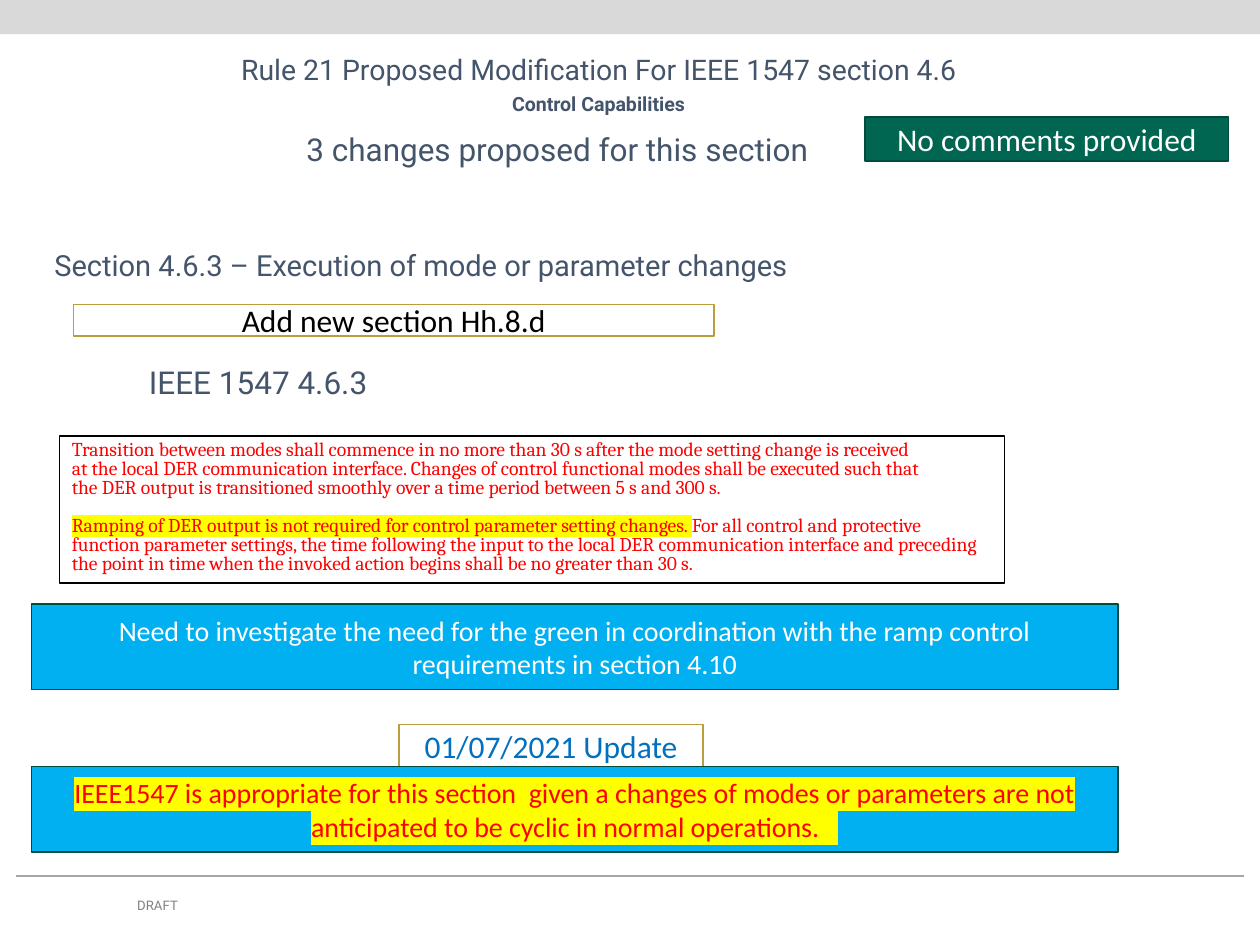
"""Build the Rule 21 slide on IEEE 1547 section 4.6 control capabilities."""
from dataclasses import dataclass
from typing import Optional

from lxml import etree
from pptx import Presentation
from pptx.dml.color import RGBColor
from pptx.enum.shapes import MSO_CONNECTOR, MSO_SHAPE
from pptx.enum.text import MSO_ANCHOR, PP_ALIGN
from pptx.oxml.ns import qn
from pptx.util import Pt

RECTANGLE = MSO_SHAPE.RECTANGLE
STRAIGHT = MSO_CONNECTOR.STRAIGHT
TOP, MIDDLE = MSO_ANCHOR.TOP, MSO_ANCHOR.MIDDLE
LEFT, CENTER = PP_ALIGN.LEFT, PP_ALIGN.CENTER


@dataclass(frozen=True)
class Theme:
    heading_font: str = "Roboto"
    note_font: str = "Calibri"
    quote_font: str = "Cambria"
    slate: str = "44546A"
    band: str = "D9D9D9"
    rule: str = "A6A6A6"
    footer: str = "808080"
    gold: str = "BB9D3A"
    green: str = "006651"
    dark_green: str = "004B3C"
    sky: str = "00B0F0"
    blue: str = "0070C0"
    red: str = "FF0000"
    yellow: str = "FFFF00"
    black: str = "000000"
    white: str = "FFFFFF"
    large: float = 18
    section: float = 16.6
    title: float = 16.2
    note: float = 16
    body: float = 11.2
    small: float = 7.5


THEME = Theme()


@dataclass(frozen=True)
class Box:
    left: float
    top: float
    width: float
    height: float

    def lengths(self) -> tuple:
        return Pt(self.left), Pt(self.top), Pt(self.width), Pt(self.height)


@dataclass(frozen=True)
class Line:
    text: str
    size: float
    color: str = THEME.slate
    font: str = THEME.heading_font
    bold: bool = False
    align: PP_ALIGN = LEFT
    marked: str = ""
    spacing: Optional[float] = None
    before: float = 0
    after: float = 0


@dataclass(frozen=True)
class Panel:
    box: Box
    lines: tuple
    outline: str
    fill: Optional[str] = None
    anchor: MSO_ANCHOR = MIDDLE


def heading(text: str, size: float, **options) -> Line:
    return Line(text, size, after=6, **options)


def note(text: str, color: str, size: float = THEME.large, **options) -> Line:
    return Line(text, size, color, THEME.note_font, align=CENTER, **options)


def quote(text: str, **options) -> Line:
    return Line(text, THEME.body, THEME.red, THEME.quote_font, spacing=0.8, **options)


def add_marked_run(paragraph, text: str) -> None:
    run = paragraph.add_run()
    run.text = text
    highlight = etree.SubElement(run.font._element, qn("a:highlight"))
    etree.SubElement(highlight, qn("a:srgbClr"), val=THEME.yellow)


def write(frame, lines: tuple, anchor: MSO_ANCHOR) -> None:
    frame.word_wrap = True
    frame.vertical_anchor = anchor
    for index, line in enumerate(lines):
        paragraph = frame.add_paragraph() if index else frame.paragraphs[0]
        paragraph.alignment = line.align
        if line.spacing:
            paragraph.line_spacing = line.spacing
        if line.before:
            paragraph.space_before = Pt(line.before)
        paragraph.space_after = Pt(line.after)
        if line.marked:
            add_marked_run(paragraph, line.marked)
        if line.text:
            paragraph.add_run().text = line.text
        font = paragraph.font
        font.name, font.size, font.bold = line.font, Pt(line.size), line.bold
        font.color.rgb = RGBColor.from_string(line.color)


def add_text(slide, box: Box, lines: tuple, anchor: MSO_ANCHOR = TOP) -> None:
    write(slide.shapes.add_textbox(*box.lengths()).text_frame, lines, anchor)


def add_rectangle(slide, box: Box, fill: Optional[str], outline: Optional[str]):
    rectangle = slide.shapes.add_shape(RECTANGLE, *box.lengths())
    rectangle.shadow.inherit = False
    if fill:
        rectangle.fill.solid()
        rectangle.fill.fore_color.rgb = RGBColor.from_string(fill)
    else:
        rectangle.fill.background()
    if outline:
        rectangle.line.color.rgb = RGBColor.from_string(outline)
        rectangle.line.width = Pt(1)
    else:
        rectangle.line.fill.background()
    return rectangle


def add_panel(slide, panel: Panel) -> None:
    rectangle = add_rectangle(slide, panel.box, panel.fill, panel.outline)
    write(rectangle.text_frame, panel.lines, panel.anchor)


def add_footer_rule(slide) -> None:
    rule = slide.shapes.add_connector(STRAIGHT, Pt(9), Pt(500.5), Pt(711), Pt(500.5))
    rule.line.color.rgb = RGBColor.from_string(THEME.rule)
    rule.line.width = Pt(1)
    etree.SubElement(rule._element.spPr, qn("a:effectLst"))


HEADINGS = (
    (Box(42, 30, 600, 42), (
        heading("Rule 21 Proposed Modification For IEEE 1547 section 4.6", THEME.title,
                align=CENTER, spacing=0.8),
        heading("Control Capabilities", THEME.body, bold=True, align=CENTER, spacing=0.8))),
    (Box(168, 70.5, 355, 38), (heading("3 changes proposed for this section", THEME.large),)),
    (Box(24, 138, 450, 42), (
        heading("Section 4.6.3 – Execution of mode or parameter changes", THEME.section),)),
    (Box(78, 204, 198, 33), (heading("IEEE 1547 4.6.3", THEME.large),)),
)

PANELS = (
    Panel(Box(228, 414, 174, 24), (note("01/07/2021 Update", THEME.blue),), THEME.gold),
    Panel(Box(42, 174, 366, 18), (note("Add new section Hh.8.d", THEME.black),), THEME.gold),
    Panel(Box(34, 249, 540, 84), (
        quote("Transition between modes shall commence in no more than 30 s after the mode "
              "setting change is received"),
        quote("at the local DER communication interface. Changes of control functional modes "
              "shall be executed such that"),
        quote("the DER output is transitioned smoothly over a time period between 5 s and 300 s."),
        quote("For all control and protective function parameter settings, the time following "
              "the input to the local DER communication interface and preceding the point in "
              "time when the invoked action begins shall be no greater than 30 s.",
              marked="Ramping of DER output is not required for control parameter setting "
                     "changes. ", before=10.9)), THEME.black, anchor=TOP),
    Panel(Box(494.5, 67, 207.5, 25), (note("No comments provided", THEME.white),),
          THEME.dark_green, THEME.green),
    Panel(Box(18, 345, 621, 49), (
        note("Need to investigate the need for the green in coordination with the ramp control "
             "requirements in section 4.10", THEME.white, THEME.note),),
        THEME.dark_green, THEME.sky),
    Panel(Box(18, 438, 621, 49), (
        note("", THEME.red, THEME.note,
             marked="IEEE1547 is appropriate for this section  given a changes of modes or "
                    "parameters are not anticipated to be cyclic in normal operations.   "),),
        THEME.dark_green, THEME.sky),
)


def main() -> None:
    deck = Presentation()
    deck.slide_width, deck.slide_height = Pt(720), Pt(540)
    slide = deck.slides.add_slide(deck.slide_layouts[6])
    add_rectangle(slide, Box(0, 0, 720, 19.5), THEME.band, None)
    add_footer_rule(slide)
    add_text(slide, Box(9, 502.5, 162, 29),
             (Line("DRAFT", THEME.small, THEME.footer, align=CENTER),), MIDDLE)
    for box, lines in HEADINGS:
        add_text(slide, box, lines)
    for panel in PANELS:
        add_panel(slide, panel)
    deck.save("out.pptx")


if __name__ == "__main__":
    main()
